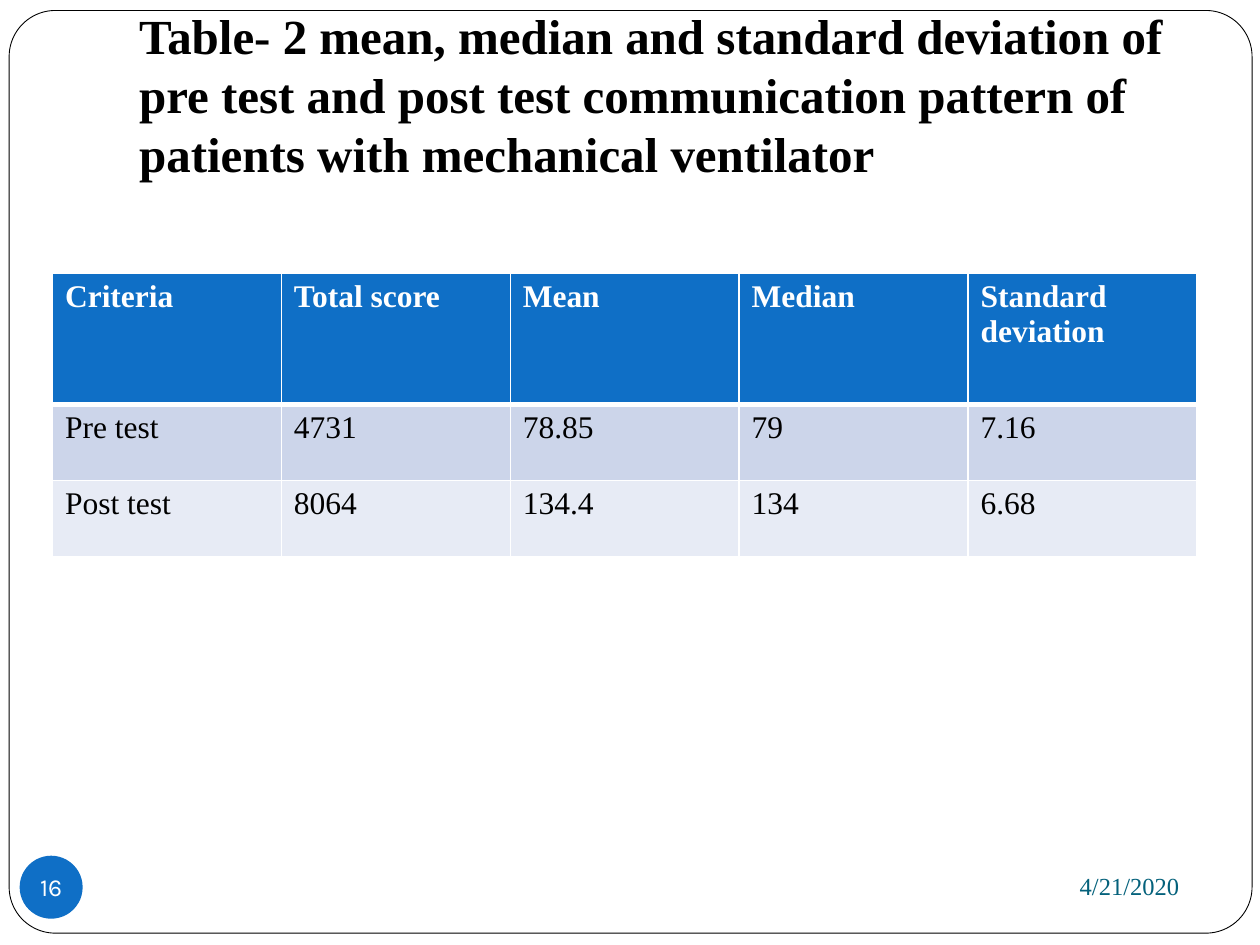
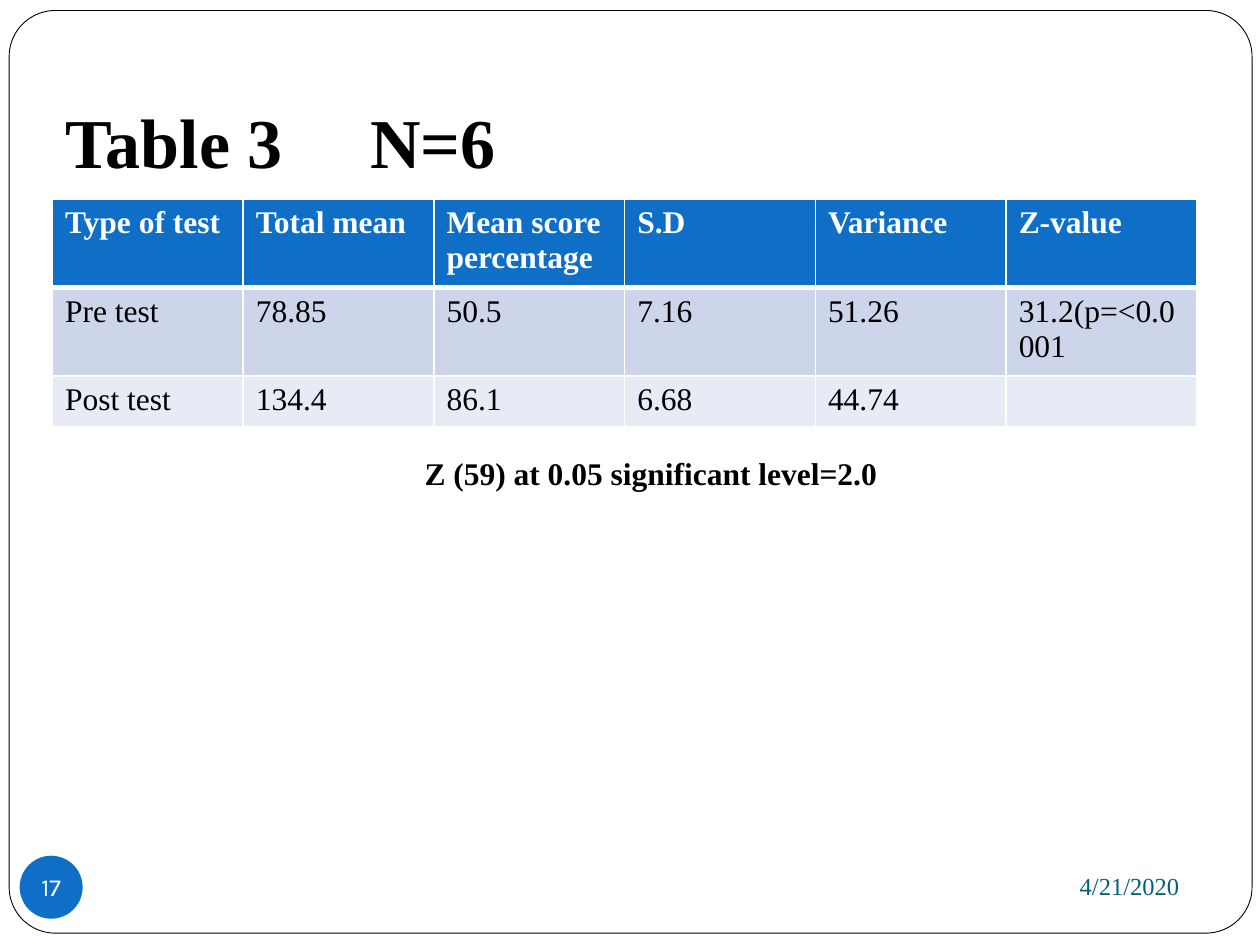
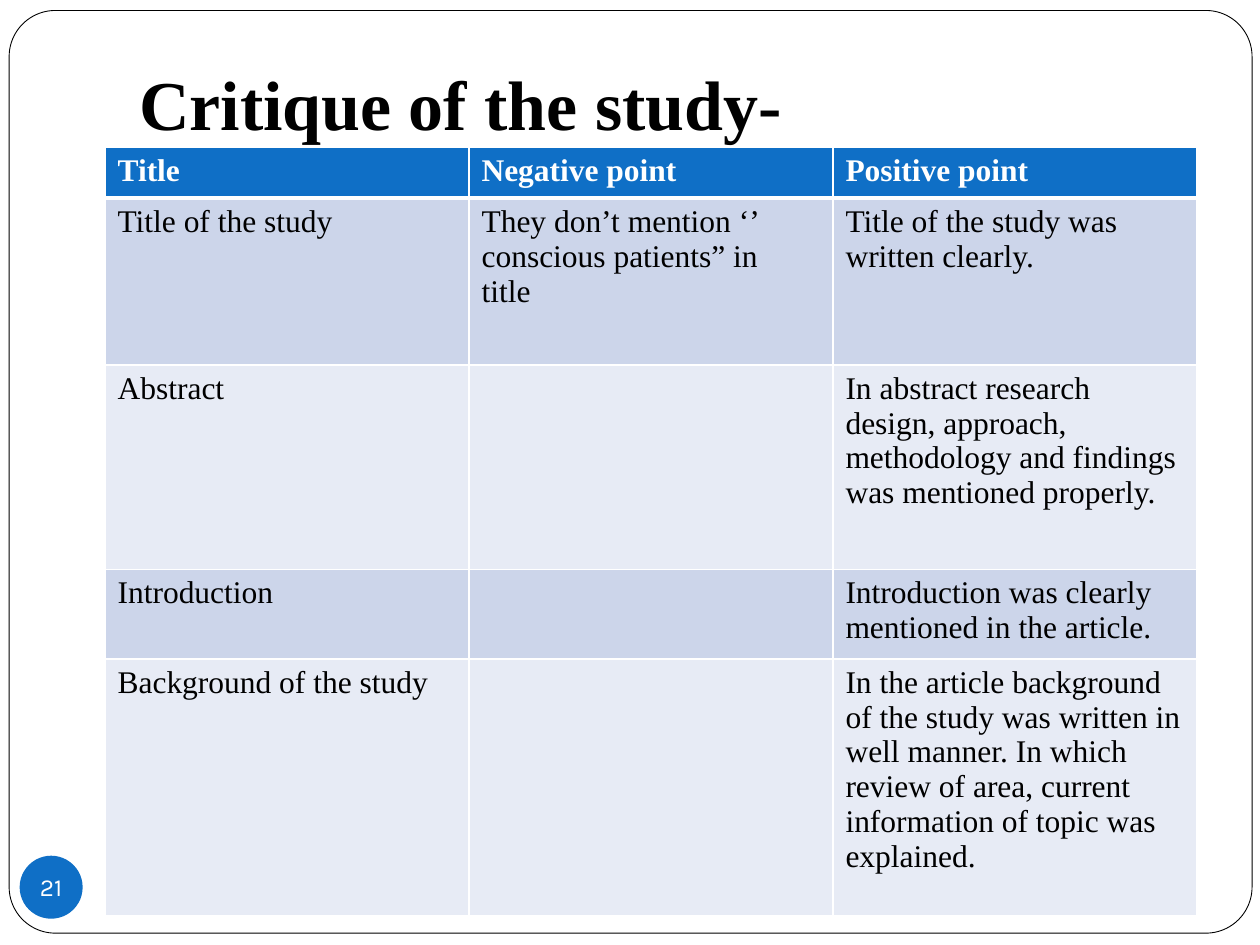
from dataclasses import dataclass

from lxml.etree import SubElement
from pptx import Presentation
from pptx.dml.color import RGBColor
from pptx.enum.shapes import MSO_SHAPE
from pptx.enum.text import MSO_ANCHOR, MSO_AUTO_SIZE, PP_ALIGN
from pptx.oxml.ns import qn
from pptx.util import Emu, Pt

# Shared look
SCALE = 9525  # EMU in one px, 96 px to the inch
SERIF, SANS = "Times New Roman", "Karla"
BLACK, WHITE, BLUE, TEAL = "000000", "FFFFFF", "0F6FC6", "04617B"
BANDS = ("CCD5EA", "E7EBF5")
DATE = "4/21/2020"
THIN, THICK = 1, 3


@dataclass(frozen=True)
class Box:
    left: int
    top: int
    width: int
    height: int

    def emu(self) -> tuple:
        return tuple(px(n) for n in (self.left, self.top, self.width, self.height))


@dataclass(frozen=True)
class Grid:
    box: Box
    heights: tuple
    rows: tuple


@dataclass(frozen=True)
class Page:
    number: int
    title: str
    box: Box
    size: int
    grid: Grid
    dated: bool = True
    note: str = ""
    tab: int = 0


FRAME = Box(7, 8, 947, 703)
BADGE = Box(15, 652, 48, 48)
STAMP = Box(648, 650, 260, 50)
NOTE = Box(314, 341, 373, 38)

PAGES = (
    Page(
        16,
        "Table- 2 mean, median and standard deviation of pre test and post test "
        "communication pattern of patients with mechanical ventilator",
        Box(96, 29, 816, 120), 28,
        Grid(Box(40, 208, 872, 216), (100, 58, 58), (
            ("Criteria", "Total score", "Mean", "Median", "Standard deviation"),
            ("Pre test", "4731", "78.85", "79", "7.16"),
            ("Post test", "8064", "134.4", "134", "6.68"),
        )),
    ),
    Page(
        17, "Table 3\tN=6", Box(40, 29, 872, 120), 40,
        Grid(Box(40, 152, 872, 174), (39, 39, 39), (
            ("Type of test", "Total mean", "Mean score percentage", "S.D",
             "Variance", "Z-value"),
            ("Pre test", "78.85", "50.5", "7.16", "51.26", "31.2(p=<0.0001"),
            ("Post test", "134.4", "86.1", "6.68", "44.74", ""),
        )),
        note="Z (59) at 0.05 significant level=2.0", tab=232,
    ),
    Page(
        21, "Critique of the study-", Box(96, 29, 816, 91), 40,
        Grid(Box(80, 112, 832, 586), (39, 127, 156, 68, 196), (
            ("Title", "Negative point", "Positive point"),
            ("Title of the study",
             "They don’t mention ‘’ conscious patients” in  title",
             "Title of the study was written clearly."),
            ("Abstract", "",
             "In abstract research  design, approach, methodology and findings "
             "was mentioned properly."),
            ("Introduction", "",
             "Introduction was clearly mentioned in the article."),
            ("Background of the study", "",
             "In the article background of the study was written in well manner. "
             "In which review of area, current information of topic was explained."),
        )),
        dated=False,
    ),
)


def px(n: int) -> Emu:
    return Emu(n * SCALE)


def tint(code: str) -> RGBColor:
    return RGBColor.from_string(code)


def write(frame, text: str, size: int, color: str, bold: bool = False,
          face: str = SERIF, align=PP_ALIGN.LEFT):
    """Fill a text frame with one styled paragraph."""
    frame.text = text
    para = frame.paragraphs[0]
    para.alignment = align
    font = para.font
    font.name, font.size, font.bold = face, Pt(size), bold
    font.color.rgb = tint(color)
    return para


def inset(frame, left: int, top: int, right: int, bottom: int) -> None:
    frame.margin_left, frame.margin_top = px(left), px(top)
    frame.margin_right, frame.margin_bottom = px(right), px(bottom)


def draw(slide, kind, box: Box, fill: str):
    shape = slide.shapes.add_shape(kind, *box.emu())
    shape.shadow.inherit = False
    shape.fill.solid()
    shape.fill.fore_color.rgb = tint(fill)
    shape.line.fill.background()
    return shape


def border(layout, slide) -> None:
    """Leave only the title on the layout, with the rounded page frame behind."""
    for spot in list(layout.placeholders)[1:]:
        layout.shapes._spTree.remove(spot._element)
    shape = draw(slide, MSO_SHAPE.ROUNDED_RECTANGLE, FRAME, WHITE)
    shape.adjustments[0] = 0.05
    shape.line.color.rgb = tint(BLACK)
    shape.line.width = Pt(0.5)
    node = shape._element
    node.nvSpPr.cNvPr.set("id", "90")
    layout.shapes._spTree.insert(2, node)


def head(slide, page: Page) -> None:
    shape = slide.shapes.title
    shape.left, shape.top, shape.width, shape.height = page.box.emu()
    frame = shape.text_frame
    frame.auto_size = MSO_AUTO_SIZE.NONE
    frame.word_wrap = True
    frame.vertical_anchor = MSO_ANCHOR.BOTTOM
    inset(frame, 10, 5, 10, 10)
    para = write(frame, page.title, page.size, BLACK, bold=True)
    if page.tab:
        stops = para._p.get_or_add_pPr()
        tabs = stops.makeelement(qn("a:tabLst"))
        SubElement(tabs, qn("a:tab"), pos=str(px(page.tab)), algn="l")
        stops.find(qn("a:defRPr")).addprevious(tabs)


def badge(slide, number: int) -> None:
    shape = draw(slide, MSO_SHAPE.OVAL, BADGE, BLUE)
    frame = shape.text_frame
    frame.word_wrap = False
    frame.vertical_anchor = MSO_ANCHOR.MIDDLE
    inset(frame, 0, 0, 0, 0)
    write(frame, str(number), 14, WHITE, face=SANS, align=PP_ALIGN.CENTER)


def label(slide, box: Box, wrap: bool):
    frame = slide.shapes.add_textbox(*box.emu()).text_frame
    frame.word_wrap = wrap
    return frame


def edge(cell, top: int, bottom: int) -> None:
    """Give a cell white borders."""
    props = cell._tc.get_or_add_tcPr()
    for side, width in (("L", THIN), ("R", THIN), ("T", top), ("B", bottom)):
        line = SubElement(props, qn(f"a:ln{side}"), w=str(Pt(width)))
        fill = SubElement(line, qn("a:solidFill"))
        SubElement(fill, qn("a:srgbClr"), val=WHITE)


def table(slide, grid: Grid) -> None:
    count = len(grid.rows[0])
    body = slide.shapes.add_table(len(grid.rows), count, *grid.box.emu()).table
    for col in body.columns:
        col.width = px(grid.box.width) // count
    for i, (texts, height) in enumerate(zip(grid.rows, grid.heights)):
        body.rows[i].height = px(height)
        first = i == 0
        for j, text in enumerate(texts):
            cell = body.cell(i, j)
            edge(cell, THICK if i == 1 else THIN, THICK if first else THIN)
            cell.fill.solid()
            cell.fill.fore_color.rgb = tint(BLUE if first else BANDS[(i - 1) % 2])
            write(cell.text_frame, text, 18, WHITE if first else BLACK, bold=first)


def build(slide, page: Page) -> None:
    head(slide, page)
    if page.dated:
        frame = label(slide, STAMP, True)
        frame.vertical_anchor = MSO_ANCHOR.MIDDLE
        write(frame, DATE, 14, TEAL, align=PP_ALIGN.RIGHT)
    badge(slide, page.number)
    table(slide, page.grid)
    if page.note:
        write(label(slide, NOTE, False), page.note, 18, BLACK, bold=True)


def main() -> None:
    deck = Presentation()
    deck.slide_width, deck.slide_height = px(960), px(720)
    layout = deck.slide_layouts[5]
    slides = [deck.slides.add_slide(layout) for _ in PAGES]
    border(layout, slides[0])
    for slide, page in zip(slides, PAGES):
        build(slide, page)
    deck.save("out.pptx")


if __name__ == "__main__":
    main()
